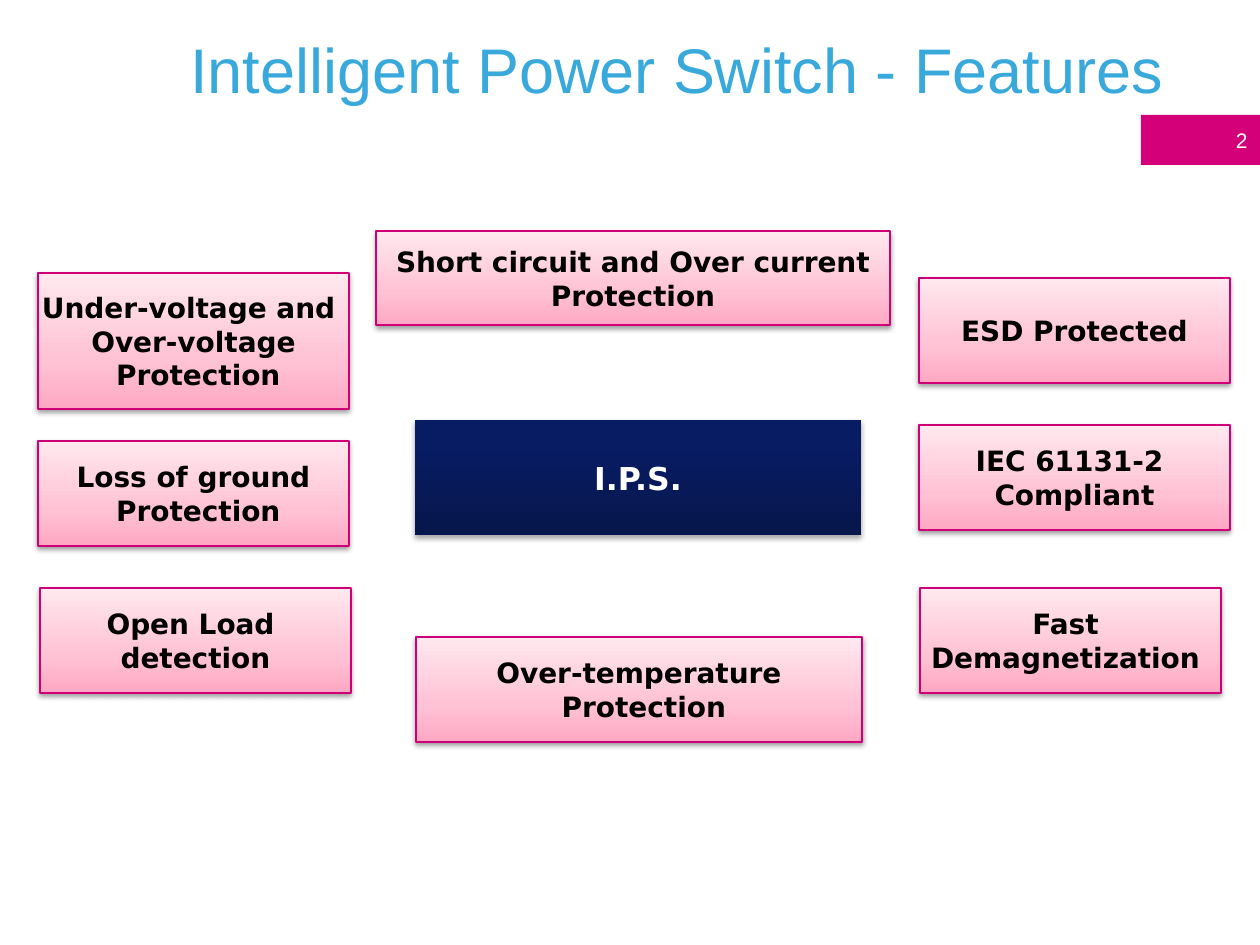
from lxml import etree
from pptx import Presentation
from pptx.dml.color import RGBColor
from pptx.enum.shapes import MSO_SHAPE
from pptx.enum.text import MSO_ANCHOR, PP_ALIGN
from pptx.oxml.ns import qn
from pptx.util import Emu, Pt

RECT = MSO_SHAPE.RECTANGLE
MIDDLE = MSO_ANCHOR.MIDDLE
CENTER, RIGHT = PP_ALIGN.CENTER, PP_ALIGN.RIGHT
PX = 914400 // 126

TITLE = ("Intelligent Power Switch - Features", (146, 21, 1030, 95))
PAGE = ("2", (1141, 115, 119, 50))
HUB = ("I.P.S.", (415, 420, 446, 115))
# Lines of each feature, then left, top, width and height in px
FEATURES = [
    (["Over-temperature", " Protection"], (416, 637, 446, 105)),
    (["Short circuit and Over current", "Protection"], (376, 231, 514, 94)),
    (["Under-voltage and ", "Over-voltage", " Protection"], (38, 273, 311, 136)),
    (["Loss of ground", " Protection"], (38, 441, 311, 105)),
    (["ESD Protected"], (919, 278, 311, 105)),
    (["IEC 61131-2 ", "Compliant"], (919, 425, 311, 105)),
    (["Open Load ", "detection"], (40, 588, 311, 105)),
    (["Fast ", "Demagnetization "], (920, 588, 301, 105)),
]
PINK_STOPS = [(0, "FFA8C3"), (35, "FFC2D4"), (100, "FFE8EE")]
NAVY_STOPS = [(0, "06164C"), (80, "081C63"), (100, "061B65")]


def rgb(color):
    return RGBColor.from_string(color)


def px(box):
    return [Emu(n * PX) for n in box]


def add_color(parent, color):
    return etree.SubElement(parent, qn("a:srgbClr"), val=color)


def write(shape, lines, size, font, color, align, bold=False, wrap=False):
    tf = shape.text_frame
    tf.word_wrap = wrap
    tf.vertical_anchor = MIDDLE
    tf.text = "\n".join(lines)
    for p in tf.paragraphs:
        p.alignment = align
        p.font.size = Pt(size)
        p.font.name = font
        p.font.bold = bold
        p.font.color.rgb = rgb(color)


def add_rect(slide, box, line=None):
    sp = slide.shapes.add_shape(RECT, *px(box))
    sp.shadow.inherit = False
    if line:
        sp.line.color.rgb = rgb(line)
        sp.line.width = Pt(0.75)
    else:
        sp.line.fill.background()
    return sp


def add_block(slide, lines, box, stops, size, color, shadow, line=None):
    """Add a rectangle with a bottom-to-top gradient and a soft shadow.

    shadow is its opacity in percent and its distance in points.
    """
    sp = add_rect(slide, box, line)
    sp.fill.gradient()
    sp.fill.gradient_angle = 90
    sp_pr = sp._element.spPr
    gs_list = sp_pr.find(qn("a:gradFill")).find(qn("a:gsLst"))
    for gs in list(gs_list):
        gs_list.remove(gs)
    for pos, stop in stops:
        add_color(etree.SubElement(gs_list, qn("a:gs"), pos=str(pos * 1000)), stop)

    opacity, distance = shadow
    outer = etree.SubElement(
        sp_pr.find(qn("a:effectLst")), qn("a:outerShdw"),
        blurRad=str(Pt(3.1)), dist=str(Pt(distance)),
        dir=str(90 * 60000), rotWithShape="0")
    etree.SubElement(add_color(outer, "000000"), qn("a:alpha"), val=str(opacity * 1000))
    write(sp, lines, size, "DejaVu Sans", color, CENTER, bold=True)


def main():
    prs = Presentation()
    prs.slide_width, prs.slide_height = px((1260, 945))
    s = prs.slides.add_slide(prs.slide_layouts[6])

    text, box = HUB
    add_block(s, [text], box, NAVY_STOPS, 18, "FFFFFF", (35, 1.8))
    for lines, box in FEATURES:
        add_block(s, lines, box, PINK_STOPS, 16, "000000", (38, 1.6), "CF0077")

    text, box = TITLE
    title = s.shapes.add_textbox(*px(box))
    write(title, [text], 36, "Arial", "39A9DC", RIGHT, wrap=True)

    text, box = PAGE
    tab = add_rect(s, box)
    tab.fill.solid()
    tab.fill.fore_color.rgb = rgb("D4007A")
    write(tab, [text], 12, "Arial", "FFFFFF", RIGHT, wrap=True)

    prs.save("out.pptx")


if __name__ == "__main__":
    main()
